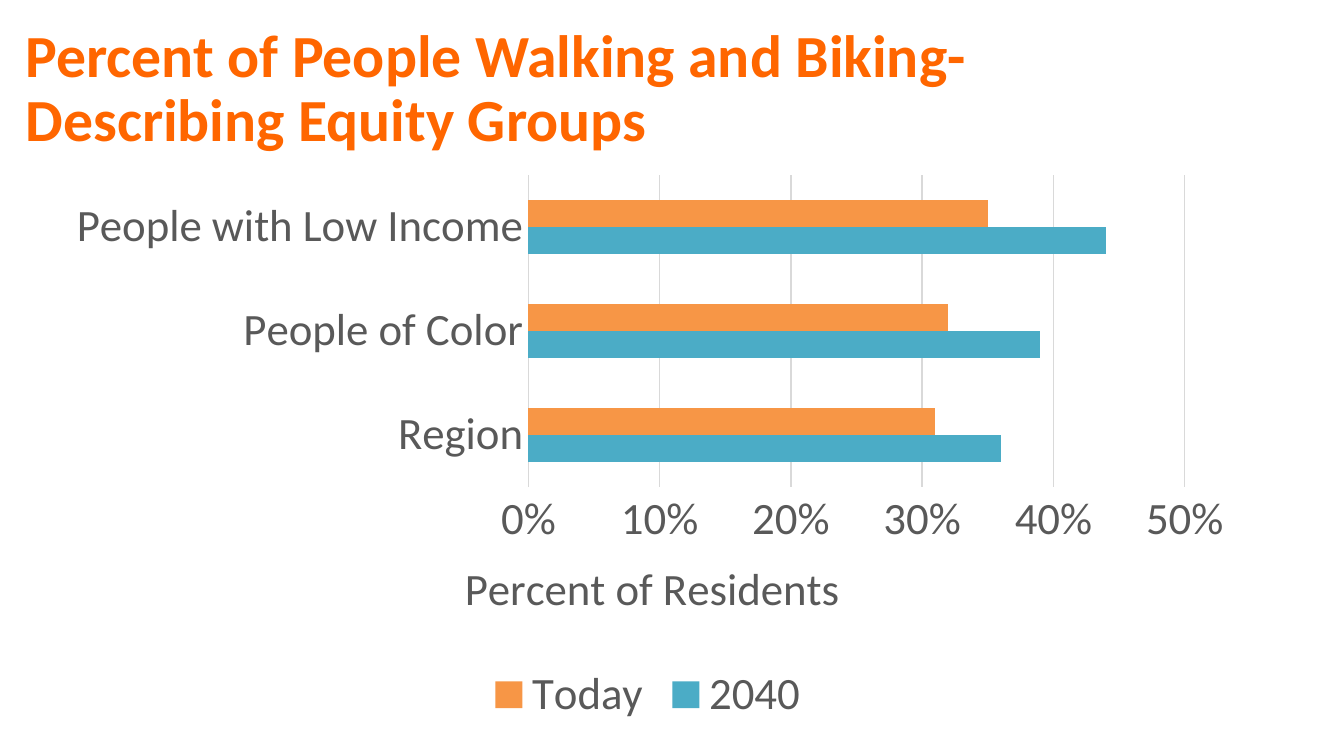
from dataclasses import dataclass

from lxml import etree
from pptx import Presentation
from pptx.chart.data import CategoryChartData
from pptx.dml.color import RGBColor
from pptx.enum.chart import XL_CHART_TYPE, XL_LEGEND_POSITION, XL_TICK_MARK
from pptx.enum.text import MSO_ANCHOR, MSO_AUTO_SIZE, PP_ALIGN
from pptx.oxml.ns import qn
from pptx.util import Inches, Pt

BAR_CLUSTERED = XL_CHART_TYPE.BAR_CLUSTERED
LEGEND_BOTTOM = XL_LEGEND_POSITION.BOTTOM
NO_TICK = XL_TICK_MARK.NONE
TOP = MSO_ANCHOR.TOP
GROW = MSO_AUTO_SIZE.SHAPE_TO_FIT_TEXT
LEFT = PP_ALIGN.LEFT


@dataclass(frozen=True)
class Theme:
    font: str = "Calibri"
    title_size: int = 32
    chart_size: int = 24
    title_color: str = "FF6600"
    text_color: str = "595959"
    grid_color: str = "D9D9D9"
    series_colors: tuple = ("4BACC6", "F79646")


class SlideBuilder:
    def __init__(self, slide, theme):
        self.slide = slide
        self.theme = theme

    def style_font(self, font, size, color, bold=False):
        font.name = self.theme.font
        font.size = Pt(size)
        font.bold = bold
        font.color.rgb = RGBColor.from_string(color)

    def style_line(self, line):
        line.width = Pt(0.75)
        line.color.rgb = RGBColor.from_string(self.theme.grid_color)

    def add_title(self, lines, left, top, width, height):
        title = self.slide.shapes.title
        title.left, title.top = Inches(left), Inches(top)
        title.width, title.height = Inches(width), Inches(height)
        frame = title.text_frame
        frame.margin_left = frame.margin_right = 0
        frame.margin_top = frame.margin_bottom = 0
        frame.vertical_anchor = TOP
        frame.word_wrap = True
        frame.auto_size = GROW
        frame.text = "\n".join(lines)
        for paragraph in frame.paragraphs:
            paragraph.alignment = LEFT
            paragraph.line_spacing = 0.9
            paragraph.space_before = Pt(0)
            self.style_font(paragraph.font, self.theme.title_size, self.theme.title_color, True)

    def set_layout(self, parent, previous, **values):
        for old in parent.findall(qn("c:layout")):
            parent.remove(old)
        layout = etree.Element(qn("c:layout"))
        manual = etree.SubElement(layout, qn("c:manualLayout"))
        for name, value in values.items():
            etree.SubElement(manual, qn(f"c:{name}")).set("val", str(value))
        if previous is None:
            parent.insert(0, layout)
        else:
            previous.addnext(layout)

    def add_bar_chart(self, categories, series, axis_title, left, top, width, height):
        data = CategoryChartData(number_format="0%")
        data.categories = categories
        for name, values in series.items():
            data.add_series(name, values)
        chart = self.slide.shapes.add_chart(
            BAR_CLUSTERED, Inches(left), Inches(top), Inches(width), Inches(height), data
        ).chart
        size, color = self.theme.chart_size, self.theme.text_color
        self.style_font(chart.font, size, color)
        chart.has_title = False
        chart.has_legend = True
        chart.legend.position = LEGEND_BOTTOM
        chart.legend.include_in_layout = False
        self.style_font(chart.legend.font, size, color)

        plot = chart.plots[0]
        plot.gap_width = 182
        plot.overlap = 0
        plot.vary_by_categories = False
        for bars, fill_color in zip(plot.series, self.theme.series_colors):
            bars.format.fill.solid()
            bars.format.fill.fore_color.rgb = RGBColor.from_string(fill_color)

        for axis in (chart.category_axis, chart.value_axis):
            axis.major_tick_mark = axis.minor_tick_mark = NO_TICK
            self.style_font(axis.tick_labels.font, size, color)
        chart.category_axis.has_major_gridlines = False
        self.style_line(chart.category_axis.format.line)

        value_axis = chart.value_axis
        value_axis.minimum_scale, value_axis.maximum_scale = 0, 0.5
        value_axis.major_unit = 0.1
        value_axis.tick_labels.number_format = "0%"
        value_axis.tick_labels.number_format_is_linked = False
        value_axis.format.line.fill.background()
        value_axis.has_major_gridlines = True
        self.style_line(value_axis.major_gridlines.format.line)
        frame = value_axis.axis_title.text_frame
        frame.text = axis_title
        self.style_font(frame.paragraphs[0].font, size, color)

        title_element = value_axis.axis_title._element
        self.set_layout(title_element, title_element.find(qn("c:tx")),
                        xMode="edge", yMode="edge", x=0.34, y=0.68)
        plot_area = chart._chartSpace.find(f".//{qn('c:plotArea')}")
        self.set_layout(plot_area, None, layoutTarget="inner", xMode="edge", yMode="edge",
                        x=0.4, y=0.02, w=0.55, h=0.55)


def main():
    presentation = Presentation()
    presentation.slide_width = Inches(10)
    presentation.slide_height = presentation.slide_width * 9 // 16
    slide = presentation.slides.add_slide(presentation.slide_layouts[5])
    builder = SlideBuilder(slide, Theme())
    builder.add_title(
        ["Percent of People Walking and Biking-", "Describing Equity Groups"],
        0.19, 0.19, 8.88, 0.98,
    )
    builder.add_bar_chart(
        ["Region", "People of Color", "People with Low Income"],
        {"2040": (0.36, 0.39, 0.44), "Today": (0.31, 0.32, 0.35)},
        "Percent of Residents",
        0.38, 1.22, 8.88, 4.22,
    )
    presentation.save("out.pptx")


if __name__ == "__main__":
    main()
